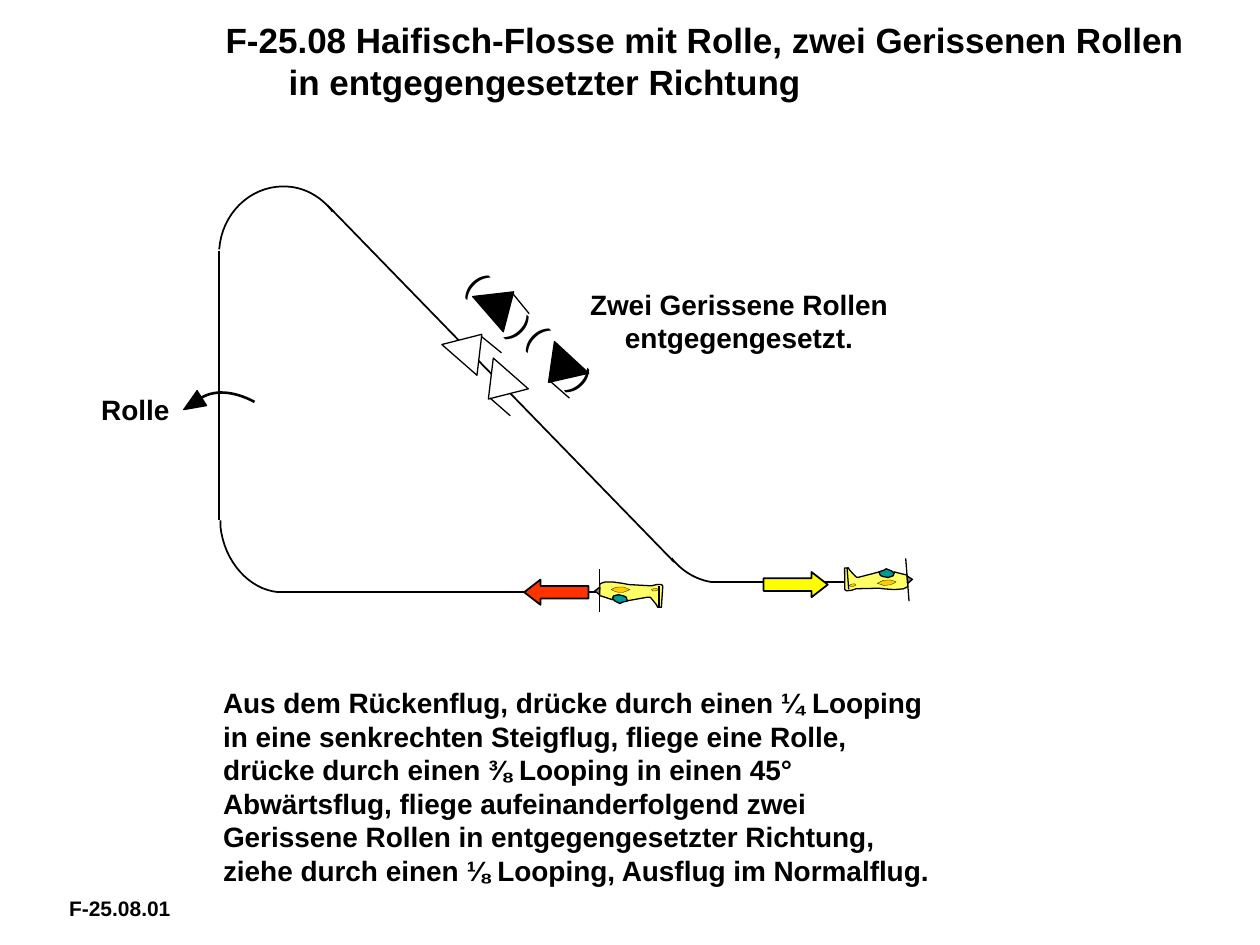
from dataclasses import dataclass
from math import cos, radians, sin
from typing import Optional

from pptx import Presentation
from pptx.dml.color import RGBColor
from pptx.enum.shapes import MSO_CONNECTOR, MSO_SHAPE
from pptx.enum.text import MSO_ANCHOR, MSO_AUTO_SIZE, PP_ALIGN
from pptx.oxml.ns import qn
from pptx.util import Inches, Pt
from lxml.etree import SubElement

Point = tuple[float, float]

BLACK = RGBColor(0x00, 0x00, 0x00)
WHITE = RGBColor(0xFF, 0xFF, 0xFF)
YELLOW = RGBColor(0xFF, 0xFF, 0x00)
RED = RGBColor(0xFF, 0x33, 0x00)
FUSELAGE = RGBColor(0xFF, 0xFF, 0x66)
CANOPY = RGBColor(0x00, 0x99, 0x99)
MARKING = RGBColor(0xFF, 0xCC, 0x00)
GREY = RGBColor(0x80, 0x80, 0x80)


@dataclass
class Label:
    text: str
    at: tuple[float, float, float, float]
    size: int
    bold: bool = True
    align: PP_ALIGN = PP_ALIGN.LEFT
    rotation: float = 0
    tab: Optional[float] = None
    spacing: float = 1.0


@dataclass
class Preset:
    kind: MSO_SHAPE
    at: tuple[float, float, float, float]
    fill: RGBColor
    rotation: float = 0
    weight: float = 0.75


@dataclass
class Plane:
    centre: Point
    angle: float

    def place(self, point: Point) -> Point:
        x, y = point[0] / 100, point[1] / 100
        c, s = cos(radians(self.angle)), sin(radians(self.angle))
        return self.centre[0] + x * c - y * s, self.centre[1] + x * s + y * c


TITLE = Label("F-25.08 Haifisch-Flosse mit Rolle, zwei Gerissenen Rollen\v"
              "\tin entgegengesetzter Richtung", (1.69, 0.1, 7.82, 0.76), 20, tab=1.02)
DESCRIPTION = Label(
    "Aus dem Rückenflug, drücke durch einen ¼ Looping in eine senkrechten Steigflug, "
    "fliege eine Rolle, drücke durch einen ⅜ Looping in einen 45° Abwärtsflug, fliege "
    "aufeinanderfolgend zwei Gerissene Rollen in entgegengesetzter Richtung, ziehe durch "
    "einen ⅛ Looping, Ausflug im Normalflug.", (1.67, 5.39, 5.84, 1.72), 16)
LABELS = [
    *[Label("(\t)", (x, y, 0.98, 0.43), 20, bold=False, rotation=45.9, tab=0.56)
      for x, y in ((4.03, 2.69), (3.55, 2.27))],
    Label("F-25.08.01", (0.45, 7.1, 1.03, 0.26), 12, spacing=0.8),
    Label("Rolle", (0.36, 3.07, 1.43, 0.37), 16, align=PP_ALIGN.CENTER),
    Label("Zwei Gerissene Rollen entgegengesetzt.", (4.42, 2.23, 2.89, 0.64), 16,
          align=PP_ALIGN.CENTER),
]

FLIGHT_LINES = [
    ((5.35, 4.46), (2.6, 1.63)),
    ((6.74, 4.62), (5.65, 4.62)),
    ((4.79, 4.7), (2.21, 4.7)),
    ((1.74, 1.99), (1.74, 4.13)),
]
FLIGHT_CURVES = [
    [(5.65, 4.62), (5.52, 4.6), (5.41, 4.53), (5.33, 4.43)],
    [(1.74, 1.98), (1.76, 1.7), (1.98, 1.48), (2.25, 1.48),
     (2.4, 1.48), (2.54, 1.55), (2.64, 1.68)],
    [(2.21, 4.7), (1.98, 4.68), (1.78, 4.46), (1.75, 4.18),
     (1.75, 4.17), (1.75, 4.15), (1.75, 4.13)],
]
ROLL_CURVE = [(2.02, 3.19), (1.85, 3.1), (1.69, 3.09), (1.58, 3.17)]
ROLL_HEAD = Preset(MSO_SHAPE.ISOSCELES_TRIANGLE, (1.46, 3.12, 0.14, 0.17), BLACK, 237.6)
DIRECTIONS = [
    Preset(MSO_SHAPE.RIGHT_ARROW, (6.06, 4.54, 0.51, 0.2), YELLOW, weight=1),
    Preset(MSO_SHAPE.RIGHT_ARROW, (4.16, 4.6, 0.51, 0.2), RED, 180, 1),
]
SNAP_ROLLS = [
    ((3.79, 2.27), 49, BLACK, ((4.2, 2.49), (4.07, 2.33))),
    ((4.26, 2.8), 222.7, BLACK, ((4.52, 3.16), (4.36, 3.02))),
    ((3.78, 2.93), 221.3, WHITE, ((4.05, 3.3), (3.89, 3.16))),
    ((3.55, 2.62), 41.2, WHITE, ((3.98, 2.8), (3.82, 2.67))),
]

PLANES = [Plane((5, 4.72), 0), Plane((6.96, 4.59), 175.6)]
PLANE_PARTS = [
    ([(-14, 4), (-17, 3), (-20, 2), (-23, 1), (-24, 1), (-25, -3), (-24, -4), (-24, -8),
      (-23, -9), (-20, -10), (-13, -10), (-6, -9), (-1, -8), (17, -7), (21, -8), (25, -8),
      (26, -7), (26, -6), (25, 9), (25, 10), (22, 10), (21, 8), (17, 3), (16, 2), (14, 2),
      (-3, 5), (-4, 2), (-9, 1), (-12, 1), (-13, 3)], FUSELAGE, 0.75),
    ([(-2, 5), (-3, 2), (-5, 1), (-9, 0), (-13, 1), (-14, 3), (-12, 5), (-10, 6),
      (-8, 7), (-6, 6)], CANOPY, 0.75),
    ([(0, -4), (-5, -2), (-10, -2), (-13, -3), (-15, -4), (-13, -5), (-10, -6),
      (-5, -6)], MARKING, 0.13),
    ([(23, -4), (20, -3), (18, -3), (17, -4), (19, -5), (21, -5)], MARKING, 0.13),
]
PLANE_LINES = [((23, -7), (23, 10)), ((-24, -20), (-24, 14))]
NOSE = (-26, -3)


def write(box, label: Label) -> None:
    box.left, box.top, box.width, box.height = map(Inches, label.at)
    box.rotation = label.rotation
    frame = box.text_frame
    settings = {"word_wrap": True, "auto_size": MSO_AUTO_SIZE.NONE,
                "vertical_anchor": MSO_ANCHOR.TOP}
    for name, value in settings.items():
        setattr(frame, name, value)
    para = frame.paragraphs[0]
    para.text = label.text
    layout = {"alignment": label.align, "line_spacing": label.spacing, "space_before": Pt(0)}
    for name, value in layout.items():
        setattr(para, name, value)
    properties = para._p.get_or_add_pPr()
    properties.set("marL", "0")
    properties.set("indent", "0")
    SubElement(properties, qn("a:buNone"))
    if label.tab:
        stops = SubElement(properties, qn("a:tabLst"))
        SubElement(stops, qn("a:tab"), pos=str(Inches(label.tab)), algn="l")
    for span in para.runs:
        for name, value in {"name": "Arial", "size": Pt(label.size), "bold": label.bold}.items():
            setattr(span.font, name, value)
        span.font.color.rgb = BLACK


def finish(shape, fill: Optional[RGBColor], weight: float) -> None:
    shape.shadow.inherit = False
    if fill is None:
        shape.fill.background()
    else:
        shape.fill.solid()
        shape.fill.fore_color.rgb = fill
    shape.line.color.rgb = BLACK
    shape.line.width = Pt(weight)


def draw_preset(page, preset: Preset) -> None:
    shape = page.shapes.add_shape(preset.kind, *map(Inches, preset.at))
    shape.rotation = preset.rotation
    if preset.kind == MSO_SHAPE.RIGHT_ARROW:
        shape.adjustments[1] = 0.645
    finish(shape, preset.fill, preset.weight)


def draw_line(page, start: Point, end: Point, weight: float = 0.75) -> None:
    line = page.shapes.add_connector(MSO_CONNECTOR.STRAIGHT, *map(Inches, (*start, *end)))
    line.line.color.rgb = BLACK
    line.line.width = Pt(weight)
    SubElement(line._element.spPr, qn("a:effectLst"))


def draw_outline(page, points: list[Point], fill: Optional[RGBColor], weight: float) -> None:
    corners = [(Inches(x), Inches(y)) for x, y in points]
    builder = page.shapes.build_freeform(*corners[0])
    builder.add_line_segments(corners[1:], close=fill is not None)
    finish(builder.convert_to_shape(), fill, weight)


def draw_curve(page, controls: list[Point], weight: float, steps: int = 16) -> None:
    points = [controls[0]]
    for first in range(0, len(controls) - 1, 3):
        a, b, c, d = controls[first:first + 4]
        for t in (step / steps for step in range(1, steps + 1)):
            u = 1 - t
            points.append(tuple(u**3 * a[i] + 3 * u * u * t * b[i] + 3 * u * t * t * c[i]
                                + t**3 * d[i] for i in (0, 1)))
    draw_outline(page, points, None, weight)


def draw_plane(page, plane: Plane) -> None:
    for points, fill, weight in PLANE_PARTS:
        draw_outline(page, [plane.place(point) for point in points], fill, weight)
    x, y = plane.place(NOSE)
    draw_preset(page, Preset(MSO_SHAPE.ISOSCELES_TRIANGLE, (x - 0.03, y - 0.02, 0.06, 0.04),
                             GREY, (270 + plane.angle) % 360))
    for start, end in PLANE_LINES:
        draw_line(page, plane.place(start), plane.place(end))


def main() -> None:
    deck = Presentation()
    deck.slide_width, deck.slide_height = Inches(10), Inches(7.5)
    page = deck.slides.add_slide(deck.slide_layouts[1])
    title, body = page.shapes.title, page.placeholders[1]
    write(title, TITLE)
    write(body, DESCRIPTION)
    body.fill.solid()
    body.fill.fore_color.rgb = WHITE
    for curve in FLIGHT_CURVES:
        draw_curve(page, curve, 1)
    for start, end in FLIGHT_LINES:
        draw_line(page, start, end, 1)
    for arrow in DIRECTIONS:
        draw_preset(page, arrow)
    for plane in PLANES:
        draw_plane(page, plane)
    draw_curve(page, ROLL_CURVE, 1.5)
    draw_preset(page, ROLL_HEAD)
    for corner, angle, fill, (start, end) in SNAP_ROLLS:
        draw_preset(page, Preset(MSO_SHAPE.ISOSCELES_TRIANGLE, (*corner, 0.37, 0.27),
                                 fill, angle))
        draw_line(page, start, end)
    for label in LABELS:
        write(page.shapes.add_textbox(0, 0, 0, 0), label)
    deck.save("out.pptx")


if __name__ == "__main__":
    main()
